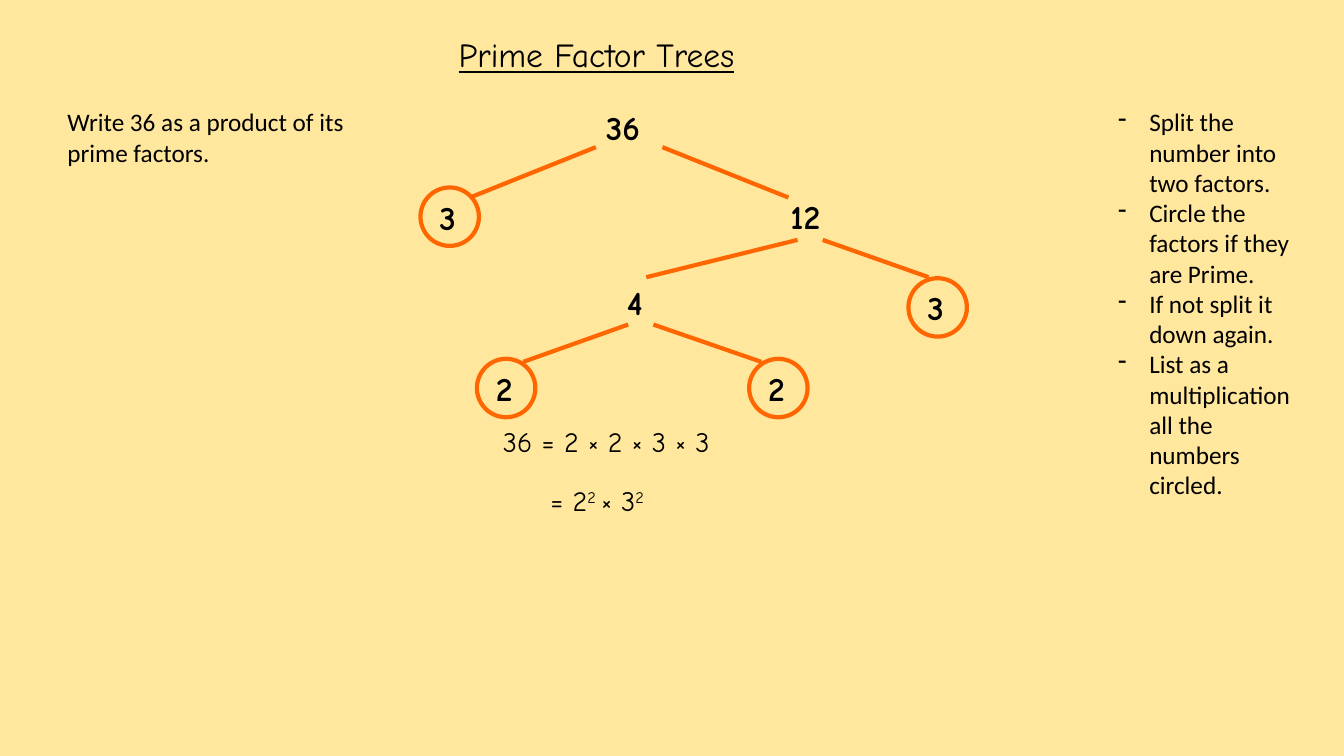
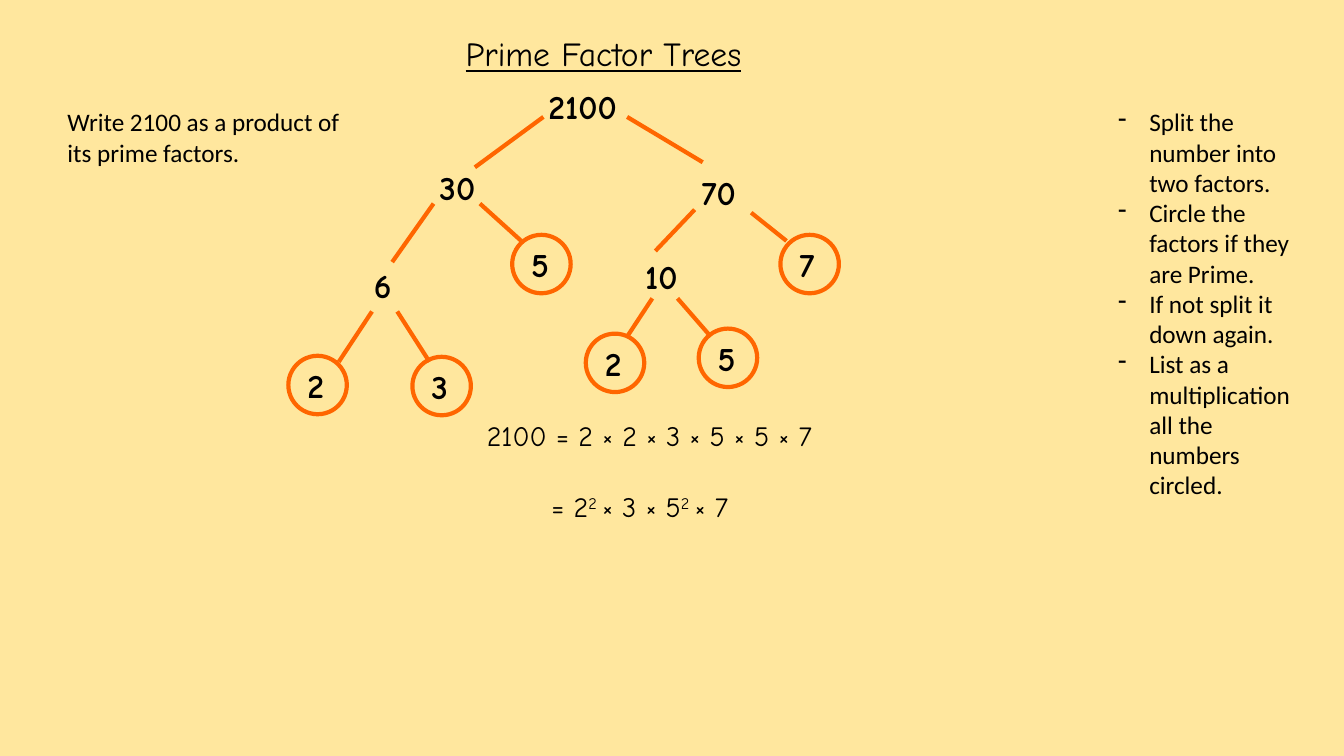
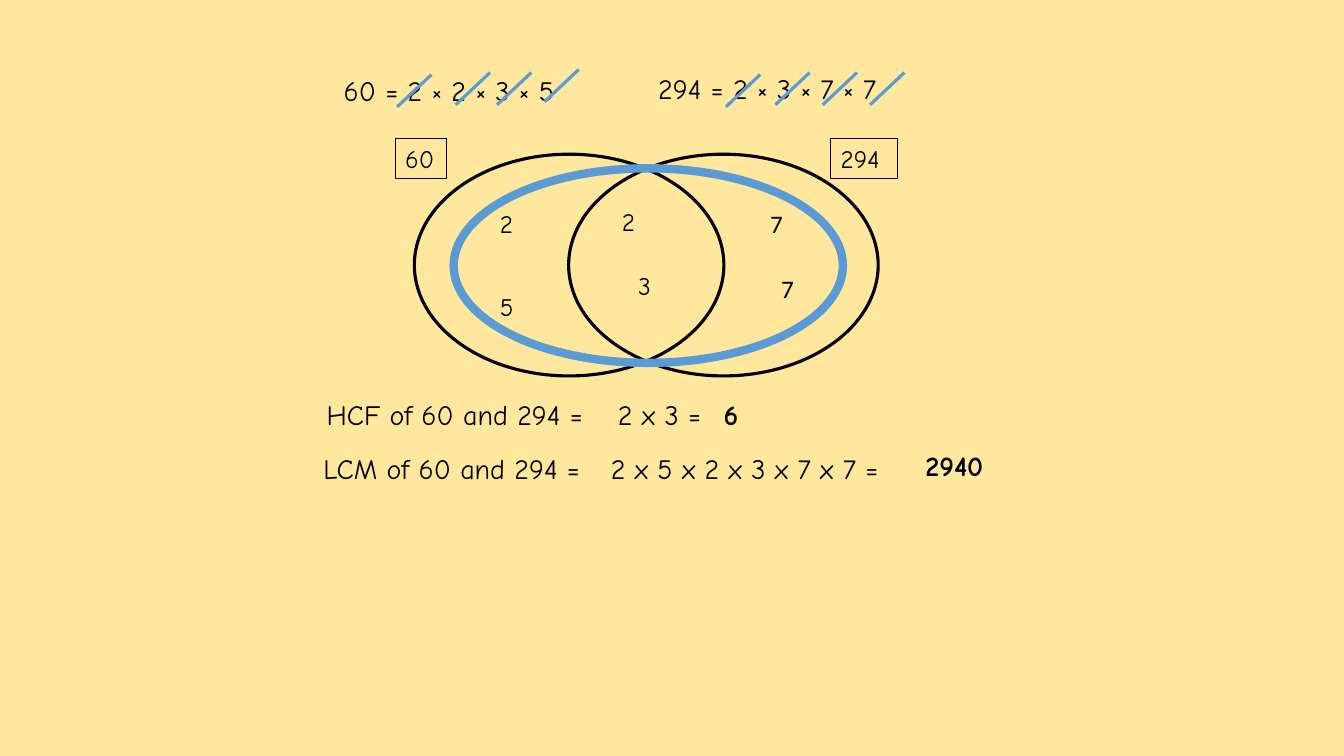
from lxml import etree
from pptx import Presentation
from pptx.dml.color import RGBColor
from pptx.enum.shapes import MSO_CONNECTOR, MSO_SHAPE
from pptx.enum.text import MSO_ANCHOR, MSO_AUTO_SIZE, PP_ALIGN
from pptx.oxml.ns import qn
from pptx.util import Inches, Pt

LINE, OVAL = MSO_CONNECTOR.STRAIGHT, MSO_SHAPE.OVAL
TOP, GROW = MSO_ANCHOR.TOP, MSO_AUTO_SIZE.SHAPE_TO_FIT_TEXT
LEFT, MID = PP_ALIGN.LEFT, PP_ALIGN.CENTER

# Shared look
SAND, INK, FIRE, BLUE = "FFE79E", "000000", "FF6600", "5B9BD5"
HAND, PLAIN = "Comic Neue", "Calibri"
DOT = 0.58  # size of the ring round a prime
STEPS = ["Split the number into two factors.",
         "Circle the factors if they are Prime.",
         "If not split it down again.",
         "List as a multiplication all the numbers circled."]

# A node is text, x, y and its branches; a branch is a limb and a node.
TREE_36 = ("36", 1.91, 0.01, [
    ((1.91, 0.46, 0.66, 0.96), ("3", 0.26, 0.9, [])),
    ((2.57, 0.46, 3.82, 0.96), ("12", 3.74, 0.89, [
        ((3.91, 1.38, 2.41, 1.75), ("4", 2.12, 1.75, [
            ((2.23, 2.22, 1.19, 2.59), ("2", 0.82, 2.6, [])),
            ((2.48, 2.22, 3.55, 2.59), ("2", 3.52, 2.6, []))])),
        ((4.16, 1.38, 5.21, 1.75), ("3", 5.1, 1.8, []))]))])
TREE_2100 = ("2100", 3.34, 0.3, [
    ((3.39, 0.66, 2.71, 1.16), ("30", 2.26, 1.11, [
        ((2.3, 1.52, 1.89, 2.1), ("6", 1.61, 2.08, [
            ((1.69, 2.59, 1.36, 3.09), ("2", 0.95, 3.07, [])),
            ((1.94, 2.59, 2.26, 3.09), ("3", 2.18, 3.08, []))])),
        ((2.76, 1.52, 3.17, 1.89), ("5", 3.17, 1.87, []))])),
    ((4.22, 0.66, 4.97, 1.11), ("70", 4.86, 1.16, [
        ((4.89, 1.58, 4.5, 1.99), ("10", 4.3, 1.99, [
            ((4.47, 2.46, 4.22, 2.84), ("2", 3.9, 2.85, [])),
            ((4.72, 2.46, 5.05, 2.84), ("5", 5.02, 2.8, []))])),
        ((5.45, 1.61, 5.8, 1.89), ("7", 5.83, 1.87, []))]))])


def tint(code):
    return RGBColor.from_string(code)


def span(*sizes):
    return [Inches(size) for size in sizes]


def pen(item, color, width):
    item.line.color.rgb = tint(color)
    item.line.width = Pt(width)


def write(frame, rows, size=20, font=HAND, bold=False, under=False,
          align=LEFT, wrap=False, dash=False):
    """Fill a frame; every second part between bars is raised."""
    frame.word_wrap, frame.auto_size = wrap, GROW
    frame.vertical_anchor = TOP
    for i, row in enumerate(rows):
        para = frame.add_paragraph() if i else frame.paragraphs[0]
        para.alignment = align
        if dash:
            props = para._p.get_or_add_pPr()
            props.set("marL", str(Inches(0.31)))
            props.set("indent", str(-Inches(0.31)))
            etree.SubElement(props, qn("a:buChar")).set("char", "-")
        for j, part in enumerate(row.split("|")):
            run = para.add_run()
            run.text = part
            face = run.font
            face.name, face.size, face.bold = font, Pt(size), bold
            face.underline = under
            face.color.rgb = tint(INK)
            if j % 2:
                run._r.get_or_add_rPr().set("baseline", "30000")


def text(slide, x, y, w, h, *rows, **look):
    box = slide.shapes.add_textbox(*span(x, y, w, h))
    write(box.text_frame, rows, **look)
    return box


def ring(slide, x, y, w, h, color, width):
    oval = slide.shapes.add_shape(OVAL, *span(x, y, w, h))
    oval.shadow.inherit = False
    oval.fill.background()
    pen(oval, color, width)


def stroke(slide, x1, y1, x2, y2, color, width):
    line = slide.shapes.add_connector(LINE, *span(x1, y1, x2, y2))
    pen(line, color, width)
    etree.SubElement(line._element.spPr, qn("a:effectLst"))


def grow(slide, x, y, node):
    """Draw a node and all below it; a node with no branch is prime."""
    word, dx, dy, kids = node
    text(slide, x + dx, y + dy, 0.2 * len(word) + 0.21, 0.5, word,
         size=24, bold=True)
    if not kids:
        ring(slide, x + dx - 0.09, y + dy - 0.04, DOT, DOT, FIRE, 3)
    for (x1, y1, x2, y2), kid in kids:
        stroke(slide, x + x1, y + y1, x + x2, y + y2, FIRE, 3)
        grow(slide, x, y, kid)


def tree_slide(deck, head, task, spot, tree, sums):
    slide = deck.slides.add_slide(deck.slide_layouts[5])
    # Title
    title = slide.shapes.title
    title.left, title.top, title.width, title.height = span(*head, 4.15, 0.5)
    write(title.text_frame, ["Prime Factor Trees"], size=24, under=True,
          align=MID, wrap=True)
    # Task and steps at the sides
    text(slide, 0.57, 1.01, 3.08, 0.71, *task, size=18, font=PLAIN, wrap=True)
    text(slide, 10.99, 1.01, 2.09, 4.04, *STEPS, size=18, font=PLAIN,
         wrap=True, dash=True)
    # Tree and its result
    grow(slide, *spot, tree)
    for x, y, w, words in sums:
        text(slide, x, y, w, 0.44, words)


def cut_sum(slide, x, y, w, words, cuts):
    """A product whose factors are struck out."""
    text(slide, x, y, w, 0.44, words)
    for dx, dy in cuts:
        stroke(slide, x + dx, y + dy, x + dx + 0.34, y + dy - 0.32, BLUE, 2.25)


def venn(slide, x, y):
    for dx in (0.21, 1.74):
        ring(slide, x + dx, y + 0.23, 3.07, 2.2, INK, 2.25)
    for dx, w, name in ((0.02, 0.51, "60"), (4.34, 0.66, "294")):
        pen(text(slide, x + dx, y + 0.07, w, 0.4, name, size=18), INK, 0.75)
    for dx, dy, word, font in (
            (2.17, 0.7, "2", HAND), (2.33, 1.33, "3", HAND),
            (0.96, 0.72, "2", HAND), (0.96, 1.54, "5", HAND),
            (3.64, 0.72, "7", PLAIN), (3.75, 1.36, "7", PLAIN)):
        text(slide, x + dx, y + dy, 0.35, 0.4, word, size=18, font=font)
    ring(slide, x + 0.6, y + 0.37, 3.86, 1.93, BLUE, 6)


def venn_slide(deck):
    slide = deck.slides.add_slide(deck.slide_layouts[6])
    cut_sum(slide, 3.31, 0.68, 2.68, "60 = 2 × 2 × 3 × 5",
            [(0.63, 0.38), (1.21, 0.36), (1.62, 0.36), (2.09, 0.33)])
    cut_sum(slide, 6.43, 0.66, 2.85, "294 = 2 × 3 × 7 × 7",
            [(0.77, 0.4), (1.26, 0.38), (1.73, 0.38), (2.2, 0.38)])
    venn(slide, 3.9, 1.3)
    # Results
    for x, y, w, words, bold in (
            (3.14, 3.89, 3.01, "HCF of 60 and 294 =", False),
            (6.03, 3.89, 1.19, "2 x 3 =", False),
            (7.08, 3.89, 0.37, "6", True),
            (3.11, 4.43, 3.02, "LCM of 60 and 294 =", False),
            (5.96, 4.43, 3.21, "2 x 5 x 2 x 3 x 7 x 7 =", False),
            (9.08, 4.4, 0.89, "2940", True)):
        text(slide, x, y, w, 0.44, words, bold=bold)


def main():
    deck = Presentation()
    deck.slide_width, deck.slide_height = span(13.33, 7.5)
    fill = deck.slide_master.background.fill
    fill.solid()
    fill.fore_color.rgb = tint(SAND)
    tree_slide(deck, (3.84, 0.29),
               ["Write 36 as a product of its", "prime factors."],
               (4, 1), TREE_36,
               [(4.89, 4.16, 2.68, "36 = 2 × 2 × 3 × 3"),
                (5.36, 4.75, 1.38, "= 2|2 |× 3|2")])
    tree_slide(deck, (3.91, 0.28),
               ["Write 2100 as a product of its prime factors."],
               (2, 0.5), TREE_2100,
               [(4.73, 4.1, 4.07, "2100 = 2 × 2 × 3 × 5 × 5 × 7"),
                (5.37, 4.81, 2.45, "= 2|2 |× 3 × 5|2 |× 7")])
    venn_slide(deck)
    deck.save("out.pptx")


if __name__ == "__main__":
    main()
